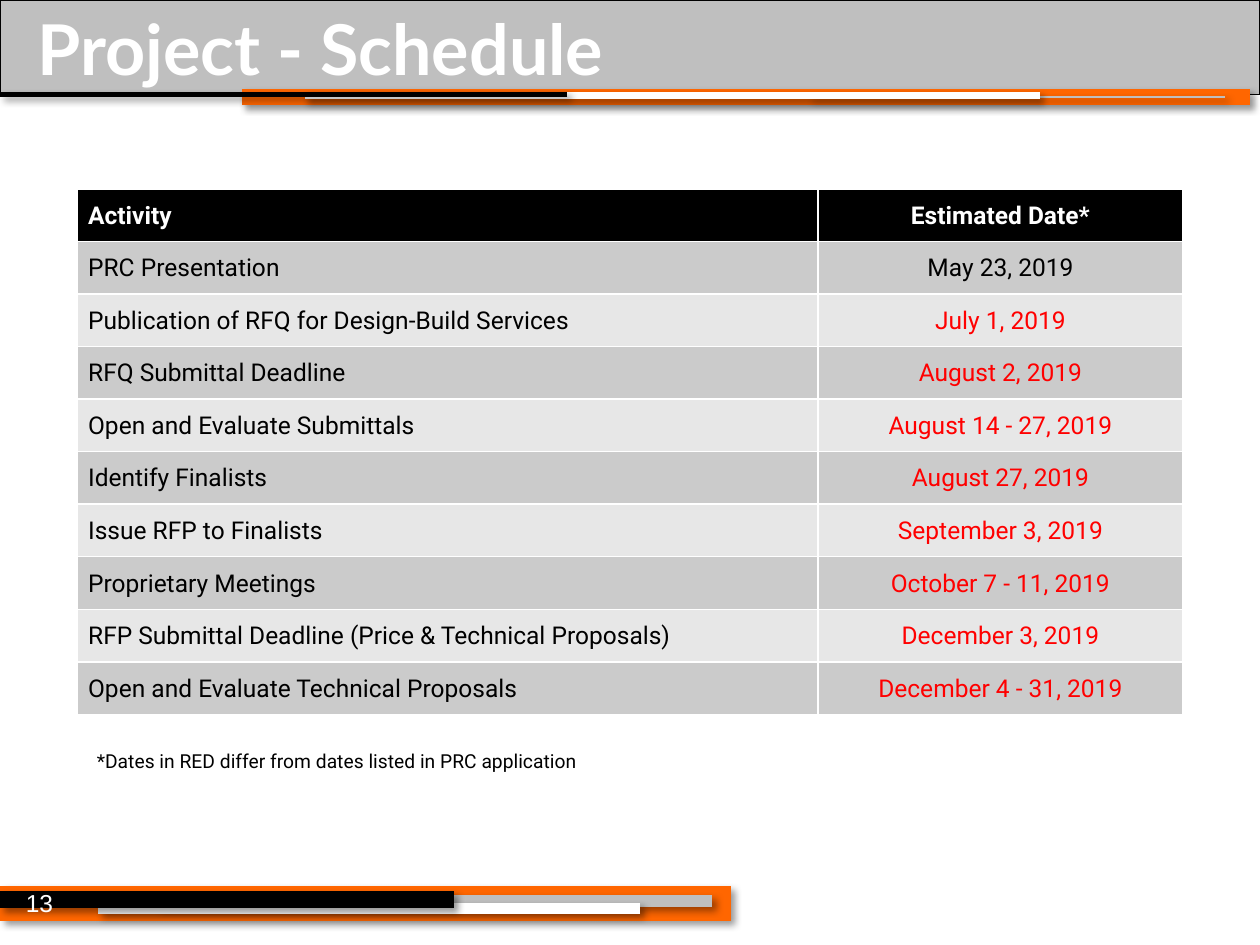
from dataclasses import dataclass
from typing import NamedTuple

from lxml.etree import SubElement
from pptx import Presentation
from pptx.dml.color import RGBColor
from pptx.enum.shapes import MSO_CONNECTOR, MSO_SHAPE
from pptx.enum.text import MSO_ANCHOR, MSO_AUTO_SIZE, PP_ALIGN
from pptx.oxml import parse_xml
from pptx.oxml.ns import nsdecls, qn
from pptx.util import Inches, Pt

# The slide is a grid of 100 columns by 75 rows
COLS, ROWS = 100, 75
UNIT = Inches(0.1)


@dataclass(frozen=True)
class Theme:
    black: str = "000000"
    white: str = "FFFFFF"
    gray: str = "BFBFBF"
    orange: str = "FF6600"
    red: str = "FF0000"
    bands: tuple = ("CBCBCB", "E7E7E7")
    head: str = "Lato"
    body: str = "Roboto"
    plain: str = "Arial"
    big: int = 40
    mid: int = 14
    small: int = 11


class Box(NamedTuple):
    x: float
    y: float
    w: float
    h: float

    def emu(self):
        return [grid(n) for n in self]


THEME = Theme()

DATES = [
    ("PRC Presentation", "May 23, 2019"),
    ("Publication of RFQ for Design-Build Services", "July 1, 2019"),
    ("RFQ Submittal Deadline", "August 2, 2019"),
    ("Open and Evaluate Submittals", "August 14 - 27, 2019"),
    ("Identify Finalists", "August 27, 2019"),
    ("Issue RFP to Finalists", "September 3, 2019"),
    ("Proprietary Meetings", "October 7 - 11, 2019"),
    ("RFP Submittal Deadline (Price & Technical Proposals)", "December 3, 2019"),
    ("Open and Evaluate Technical Proposals", "December 4 - 31, 2019"),
]

SHADOW = (
    f'<a:effectLst {nsdecls("a")}><a:outerShdw blurRad="{Pt(4)}" dist="{Pt(3)}" '
    f'dir="2700000" algn="tl" rotWithShape="0"><a:srgbClr val="{THEME.black}">'
    '<a:alpha val="40000"/></a:srgbClr></a:outerShdw></a:effectLst>'
)


def grid(n):
    return round(n * UNIT)


def rgb(code):
    return RGBColor.from_string(code)


def write(frame, text, size, face, color, bold=False, align=PP_ALIGN.LEFT):
    frame.text = text
    para = frame.paragraphs[0]
    para.alignment = align
    font = para.runs[0].font
    font.size, font.name, font.bold = Pt(size), face, bold
    font.color.rgb = rgb(color)


def stripes(slide, box, parts):
    """Draw level shadowed lines: start, end, row, colour, weight."""
    for start, end, row, color, weight in parts:
        y = grid(box.y + row)
        line = slide.shapes.add_connector(
            MSO_CONNECTOR.STRAIGHT, grid(box.x + start), y, grid(box.x + end), y)
        line.line.color.rgb = rgb(color)
        line.line.width = Pt(weight)
        line.element.spPr.append(parse_xml(SHADOW))


def header(slide, box, text):
    # Gray band
    band = slide.shapes.add_shape(MSO_SHAPE.RECTANGLE, *box.emu())
    band.shadow.inherit = False
    band.fill.solid()
    band.fill.fore_color.rgb = rgb(THEME.gray)
    band.line.color.rgb = rgb(THEME.black)
    band.line.width = Pt(0.75)
    # Stripes along the lower edge
    stripes(slide, box, [
        (19.2, 99.2, 7.7, THEME.orange, 9),
        (97.2, 64.2, 7.7, THEME.gray, 1.5),
        (82.5, 24.2, 7.6, THEME.white, 4.25),
        (45, 0, 7.5, THEME.black, 3),
    ])
    # Title, raised above the band
    title = slide.shapes.title
    title.left, title.top, title.width, title.height = box.emu()
    title.element.getparent().append(title.element)
    frame = title.text_frame
    frame.auto_size = MSO_AUTO_SIZE.NONE
    frame.word_wrap = False
    frame.vertical_anchor = MSO_ANCHOR.MIDDLE
    frame.margin_left = grid(3)
    write(frame, text, THEME.big, THEME.head, THEME.white, True)


def footer(slide, box, number):
    stripes(slide, box, [
        (0, 58, 1.7, THEME.orange, 20),
        (56.5, 12.5, 1.5, THEME.gray, 6.5),
        (50.8, 7.8, 2.1, THEME.white, 6.5),
        (36, 0, 1.4, THEME.black, 10),
    ])
    # Page number
    page = slide.shapes.add_textbox(*Box(box.x + 0.2, box.y, 5, 4.2).emu())
    page.text_frame.word_wrap = True
    write(page.text_frame, number, THEME.mid, THEME.plain, THEME.white,
          align=PP_ALIGN.RIGHT)


def border(cell):
    props = cell._tc.get_or_add_tcPr()
    for n, side in enumerate(("lnL", "lnR", "lnT", "lnB")):
        props.insert(n, parse_xml(
            f'<a:{side} {nsdecls("a")} w="{Pt(1)}"><a:solidFill>'
            f'<a:srgbClr val="{THEME.white}"/></a:solidFill></a:{side}>'))


def schedule(slide, box, rows):
    cells = [("Activity", "Estimated Date*"), *rows]
    table = slide.shapes.add_table(len(cells), 2, *box.emu()).table
    for col, share in zip(table.columns, (0.67, 0.33)):
        col.width = grid(box.w * share)
    for r, row in enumerate(cells):
        table.rows[r].height = grid(box.h / len(cells))
        for c, text in enumerate(row):
            cell = table.cell(r, c)
            head = r == 0
            cell.fill.solid()
            cell.fill.fore_color.rgb = rgb(
                THEME.black if head else THEME.bands[(r - 1) % 2])
            border(cell)
            cell.vertical_anchor = MSO_ANCHOR.MIDDLE
            cell.margin_left = grid(0.1 if c else 0.9)
            cell.margin_right = cell.margin_top = grid(0.1)
            cell.margin_bottom = 0
            # Changed dates, from the second on, are red
            late = c == 1 and r > 1
            color = THEME.white if head else THEME.red if late else THEME.black
            write(cell.text_frame, text, THEME.mid, THEME.body, color, head,
                  PP_ALIGN.CENTER if c else PP_ALIGN.LEFT)


def note(slide, box, text):
    frame = slide.shapes.add_textbox(*box.emu()).text_frame
    frame.word_wrap = True
    frame.auto_size = MSO_AUTO_SIZE.SHAPE_TO_FIT_TEXT
    write(frame, text, THEME.small, THEME.body, THEME.black)


def main():
    deck = Presentation()
    deck.slide_width, deck.slide_height = grid(COLS), grid(ROWS)
    slide = deck.slides.add_slide(deck.slide_layouts.get_by_name("Title Only"))
    header(slide, Box(0, 0, COLS, ROWS / 10), "Project - Schedule")
    footer(slide, Box(0, 70, 58, 5), "13")
    schedule(slide, Box(6.1, 15, 87.8, 41.7), DATES)
    note(slide, Box(6.7, 59, 81.7, 2.9),
         "*Dates in RED differ from dates listed in PRC application")
    deck.save("out.pptx")


if __name__ == "__main__":
    main()
